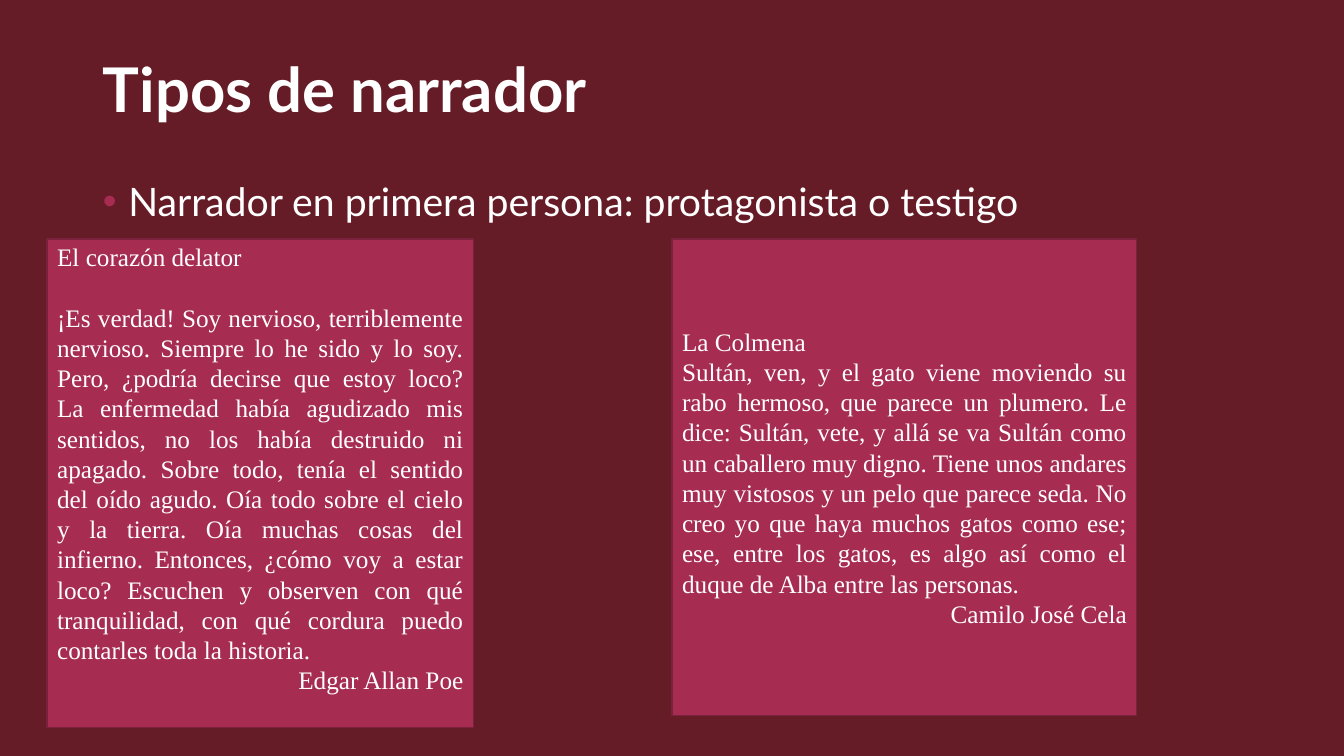
"""Build a slide on first-person narrators with two quoted passages."""
from typing import NamedTuple

from lxml import etree
from pptx import Presentation
from pptx.dml.color import RGBColor
from pptx.enum import shapes, text
from pptx.oxml.ns import qn
from pptx.util import Cm, Pt

HUES = {"wine": "651C27", "rose": "A62C52", "edge": "7B213D", "white": "FFFFFF"}
SANS, SERIF = "Lato", "Times New Roman"
LEFT, RIGHT = text.PP_ALIGN.LEFT, text.PP_ALIGN.RIGHT
EVEN = text.PP_ALIGN.JUSTIFY
LINE = Pt(21.6)


class Quote(NamedTuple):
    left: float
    width: float
    height: float
    name: str
    words: str
    author: str
    gap: float = 0
    foot: float = 0.13


QUOTES = [
    Quote(1.19, 10.74, 12.32, "El corazón delator",
          "¡Es verdad! Soy nervioso, terriblemente nervioso. Siempre lo he sido y lo soy. "
          "Pero, ¿podría decirse que estoy loco? La enfermedad había agudizado mis sentidos, "
          "no los había destruido ni apagado. Sobre todo, tenía el sentido del oído agudo. "
          "Oía todo sobre el cielo y la tierra. Oía muchas cosas del infierno. Entonces, "
          "¿cómo voy a estar loco? Escuchen y observen con qué tranquilidad, con qué cordura "
          "puedo contarles toda la historia.",
          "Edgar Allan Poe", gap=21.6, foot=0.89),
    Quote(16.94, 11.71, 12.01, "La Colmena",
          "Sultán, ven, y el gato viene moviendo su rabo hermoso, que parece un plumero. "
          "Le dice: Sultán, vete, y allá se va Sultán como un caballero muy digno. Tiene unos "
          "andares muy vistosos y un pelo que parece seda. No creo yo que haya muchos gatos "
          "como ese; ese, entre los gatos, es algo así como el duque de Alba entre las personas.",
          "Camilo José Cela"),
]


def tint(key: str) -> RGBColor:
    """Return a named colour."""
    return RGBColor.from_string(HUES[key])


def write(para, words: str, *, font: str = SERIF, size: float = 18, bold: bool = False,
          align=EVEN, space=LINE, before: float = 0, dot: bool = False) -> None:
    """Fill a paragraph and set its format."""
    para.text = words
    if dot:
        props = para._p.get_or_add_pPr()
        props.set("marL", str(Cm(0.64)))
        props.set("indent", str(-Cm(0.64)))
        hue = etree.SubElement(props, qn("a:buClr"))
        etree.SubElement(hue, qn("a:srgbClr"), val=HUES["rose"])
        etree.SubElement(props, qn("a:buFont"), typeface="Arial")
        etree.SubElement(props, qn("a:buChar"), char="•")
    para.alignment = align
    para.line_spacing = space
    para.space_before = Pt(before)
    face = para.runs[0].font
    face.name, face.size, face.bold = font, Pt(size), bold
    face.color.rgb = tint("white")


def place(item, left: float, top: float, width: float, height: float, anchor):
    """Move a placeholder and return its text frame."""
    item.left, item.top, item.width, item.height = map(Cm, (left, top, width, height))
    frame = item.text_frame
    frame.word_wrap = True
    frame.auto_size = text.MSO_AUTO_SIZE.NONE
    frame.vertical_anchor = anchor
    return frame


def panel(slide, quote: Quote) -> None:
    """Draw one quoted passage."""
    box = slide.shapes.add_shape(shapes.MSO_SHAPE.RECTANGLE, Cm(quote.left), Cm(6.02),
                                 Cm(quote.width), Cm(quote.height))
    box.shadow.inherit = False
    box.fill.solid()
    box.fill.fore_color.rgb = tint("rose")
    box.line.color.rgb = tint("edge")
    box.line.width = Pt(1)
    frame = box.text_frame
    frame.word_wrap = True
    frame.vertical_anchor = text.MSO_ANCHOR.MIDDLE
    frame.margin_bottom = Cm(quote.foot)
    write(frame.paragraphs[0], quote.name)
    write(frame.add_paragraph(), quote.words, before=quote.gap)
    write(frame.add_paragraph(), quote.author, align=RIGHT)


def main() -> None:
    """Build and save the slide."""
    deck = Presentation()
    deck.slide_width, deck.slide_height = Cm(33.87), Cm(19.05)
    slide = deck.slides.add_slide(deck.slide_layouts[1])
    fill = slide.background.fill
    fill.solid()
    fill.fore_color.rgb = tint("wine")
    head = place(slide.shapes.title, 2.34, 1.02, 29.21, 2.41, text.MSO_ANCHOR.MIDDLE)
    write(head.paragraphs[0], "Tipos de narrador", font=SANS, size=44, bold=True,
          align=LEFT, space=1.0)
    body = place(slide.placeholders[1], 2.34, 4.22, 25.86, 1.8, text.MSO_ANCHOR.TOP)
    write(body.paragraphs[0], "Narrador en primera persona: protagonista o testigo",
          font=SANS, size=28, align=LEFT, space=1.1, dot=True)
    for quote in QUOTES:
        panel(slide, quote)
    deck.save("out.pptx")


if __name__ == "__main__":
    main()
